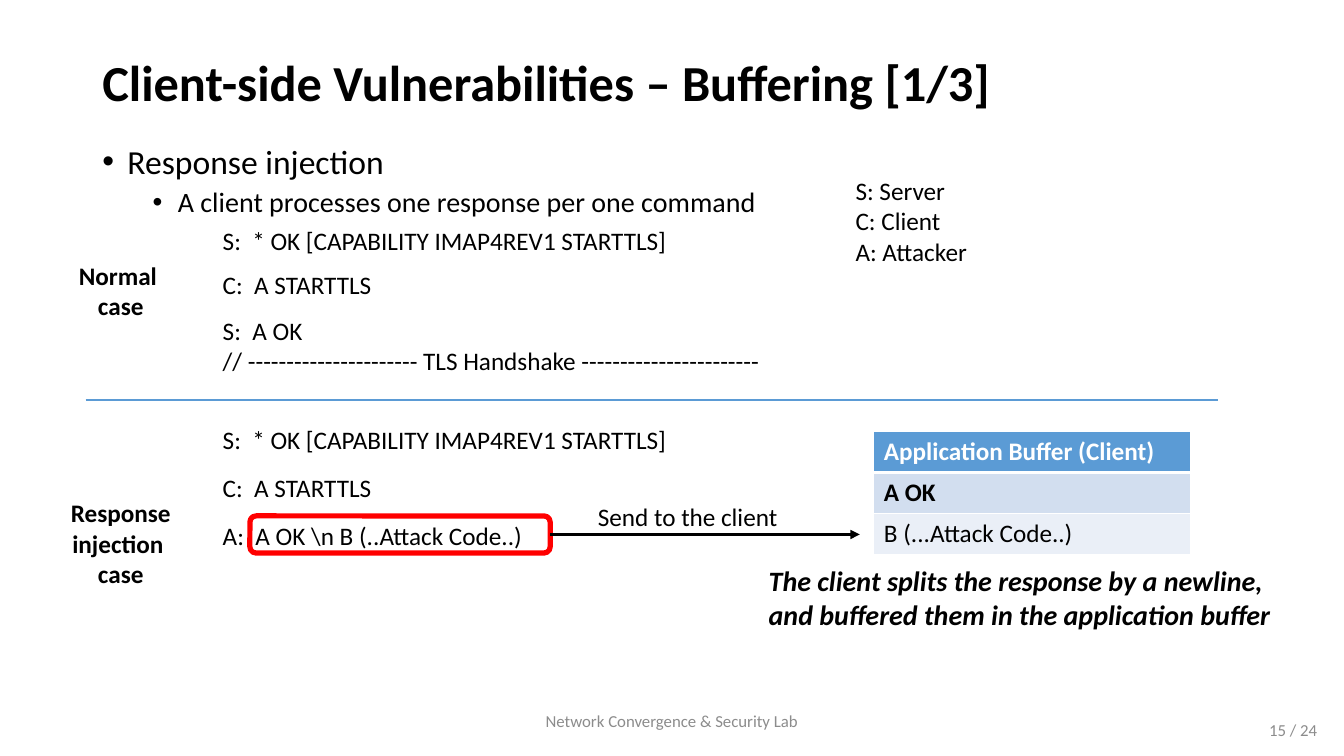
from dataclasses import dataclass, field

from lxml import etree
from pptx import Presentation
from pptx import util as u
from pptx.dml import color as dc
from pptx.enum import shapes as es, text as et
from pptx.oxml import ns

HUES = {
    "black": "000000",
    "white": "FFFFFF",
    "gray": "8C8C8C",
    "red": "FF0000",
    "blue": "5B9BD5",
    "band": "D2DEEF",
    "pale": "EAEFF7",
}
FACE = "Calibri"
MID = et.MSO_ANCHOR.MIDDLE
MAIN = {"size": 18, "bold": False, "italic": False}


@dataclass
class Line:
    words: str
    before: float = 0
    font: dict = field(default_factory=dict)
    dent: float = 0


@dataclass
class Note:
    left: float
    top: float
    width: float
    height: float
    lines: list[Line]
    font: dict = field(default_factory=dict)
    para: dict = field(default_factory=dict)
    frame: dict = field(default_factory=dict)
    hue: str = "black"


@dataclass
class Row:
    words: str
    fill: str
    hue: str
    bold: bool
    above: float
    below: float


@dataclass
class Rule:
    start: float
    end: float
    level: float
    hue: str
    weight: float


BOLD = {"bold": True}
MIDDLE = {"alignment": et.PP_ALIGN.CENTER}
SMALL = {"size": 12}
TIGHT = {"line_spacing": 0.9}

NOTES = [
    Note(66, 100, 828, 375, [
        Line("Response injection", 0, {"size": 24}, 18),
        Line("A client processes one response per one command", 5, {"size": 20}, 54),
    ], para=TIGHT),
    Note(66, 28.8, 828, 64, [Line("Client-side Vulnerabilities – Buffering [1/3]")],
         {"size": 36, "bold": True}, TIGHT, {"vertical_anchor": MID}),
    Note(152, 157.7, 425.5, 126, [
        Line("S:  * OK [CAPABILITY IMAP4REV1 STARTTLS]"),
        Line("C:  A STARTTLS", 9.8),
        Line("S:  A OK", 11),
        Line("// ---------------------- TLS Handshake -----------------------"),
    ]),
    Note(542, 399, 381.6, 55.4, [
        Line("The client splits the response by a newline,"),
        Line("and buffered them in the application buffer"),
    ], {"size": 20, "bold": True, "italic": True}),
    Note(604, 121.7, 99.4, 72.7,
         [Line("S: Server"), Line("C: Client"), Line("A: Attacker")]),
    Note(33, 182.2, 106.5, 51, [Line("Normal "), Line("case")], BOLD, MIDDLE),
    Note(33, 352, 106.5, 72.7,
         [Line("Response"), Line("injection "), Line("case")], BOLD, MIDDLE),
    Note(152, 299.5, 425.5, 108.7, [
        Line("S:  * OK [CAPABILITY IMAP4REV1 STARTTLS]"),
        Line("C:  A STARTTLS", 12.8),
        Line("A:  A OK \\n B (..Attack Code..)", 12.8),
    ]),
    Note(420, 354.2, 164, 29, [Line("Send to the client")]),
    Note(318, 500.4, 324, 28.8, [Line("Network Convergence & Security Lab")],
         SMALL, MIDDLE, {"vertical_anchor": MID}, "gray"),
    Note(732, 507, 216, 28.8, [Line("15 / 24")], SMALL,
         {"alignment": et.PP_ALIGN.RIGHT}, {"vertical_anchor": MID}, "gray"),
]

ROWS = [
    Row("Application Buffer (Client)", "blue", "white", True, 1, 3),
    Row("A OK", "band", "black", True, 3, 1),
    Row("B (...Attack Code..)", "pale", "black", False, 1, 1),
]

SPLIT = Rule(61.2, 869.8, 285.8, "blue", 1.5)
SEND = Rule(393, 614.2, 381.75, "black", 2.25)


def shade(name: str) -> dc.RGBColor:
    return dc.RGBColor.from_string(HUES[name])


def apply(target, values: dict) -> None:
    for key, value in values.items():
        setattr(target, key, value)


def style(run, font: dict, hue: str) -> None:
    look = MAIN | font
    apply(run.font, look | {"size": u.Pt(look["size"]), "name": FACE})
    run.font.color.rgb = shade(hue)


def add_dot(para, dent: float) -> None:
    props = para._p.get_or_add_pPr()
    props.set("marL", str(u.Pt(dent)))
    props.set("indent", str(-u.Pt(18)))
    etree.SubElement(props, ns.qn("a:buFont"), typeface="Arial")
    etree.SubElement(props, ns.qn("a:buChar"), char="•")


def add_note(slide, note: Note) -> None:
    place = map(u.Pt, (note.left, note.top, note.width, note.height))
    frame = slide.shapes.add_textbox(*place).text_frame
    apply(frame, {"word_wrap": True} | note.frame)
    for i, line in enumerate(note.lines):
        para = frame.add_paragraph() if i else frame.paragraphs[0]
        apply(para, note.para | {"space_before": u.Pt(line.before)})
        run = para.add_run()
        run.text = line.words
        style(run, note.font | line.font, note.hue)
        if line.dent:
            add_dot(para, line.dent)


def add_edge(cell, side: str, weight: float) -> None:
    edge = etree.SubElement(cell._tc.get_or_add_tcPr(), ns.qn(f"a:ln{side}"),
                            w=str(u.Pt(weight)))
    fill = etree.SubElement(edge, ns.qn("a:solidFill"))
    etree.SubElement(fill, ns.qn("a:srgbClr"), val=HUES["white"])


def add_grid(slide, rows: list[Row]) -> None:
    place = map(u.Pt, (624.2, 308.2, 226, 29.2 * len(rows)))
    grid = slide.shapes.add_table(len(rows), 1, *place).table
    apply(grid, {"horz_banding": False, "first_row": True})
    for i, row in enumerate(rows):
        cell = grid.cell(i, 0)
        for side, weight in zip("LRTB", (1, 1, row.above, row.below)):
            add_edge(cell, side, weight)
        cell.fill.solid()
        cell.fill.fore_color.rgb = shade(row.fill)
        run = cell.text_frame.paragraphs[0].add_run()
        run.text = row.words
        style(run, {"bold": row.bold}, row.hue)


def add_rule(slide, rule: Rule):
    ends = map(u.Pt, (rule.start, rule.level, rule.end, rule.level))
    link = slide.shapes.add_connector(es.MSO_CONNECTOR.STRAIGHT, *ends)
    link.line.color.rgb = shade(rule.hue)
    link.line.width = u.Pt(rule.weight)
    etree.SubElement(link._element.spPr, ns.qn("a:effectLst"))
    return link


def add_frame(slide):
    place = map(u.Pt, (178.5, 368.5, 214.5, 26.5))
    box = slide.shapes.add_shape(es.MSO_SHAPE.ROUNDED_RECTANGLE, *place)
    box.shadow.inherit = False
    box.fill.background()
    box.line.color.rgb = shade("red")
    box.line.width = u.Pt(3.75)
    return box


def main() -> None:
    deck = Presentation()
    apply(deck, {"slide_width": u.Pt(960), "slide_height": u.Pt(540)})
    slide = deck.slides.add_slide(deck.slide_layouts[6])
    for note in NOTES:
        add_note(slide, note)
    add_grid(slide, ROWS)
    add_rule(slide, SPLIT)
    box = add_frame(slide)
    link = add_rule(slide, SEND)
    link.begin_connect(box, 3)
    etree.SubElement(link.line._get_or_add_ln(), ns.qn("a:tailEnd"), type="triangle")
    deck.save("out.pptx")


if __name__ == "__main__":
    main()
